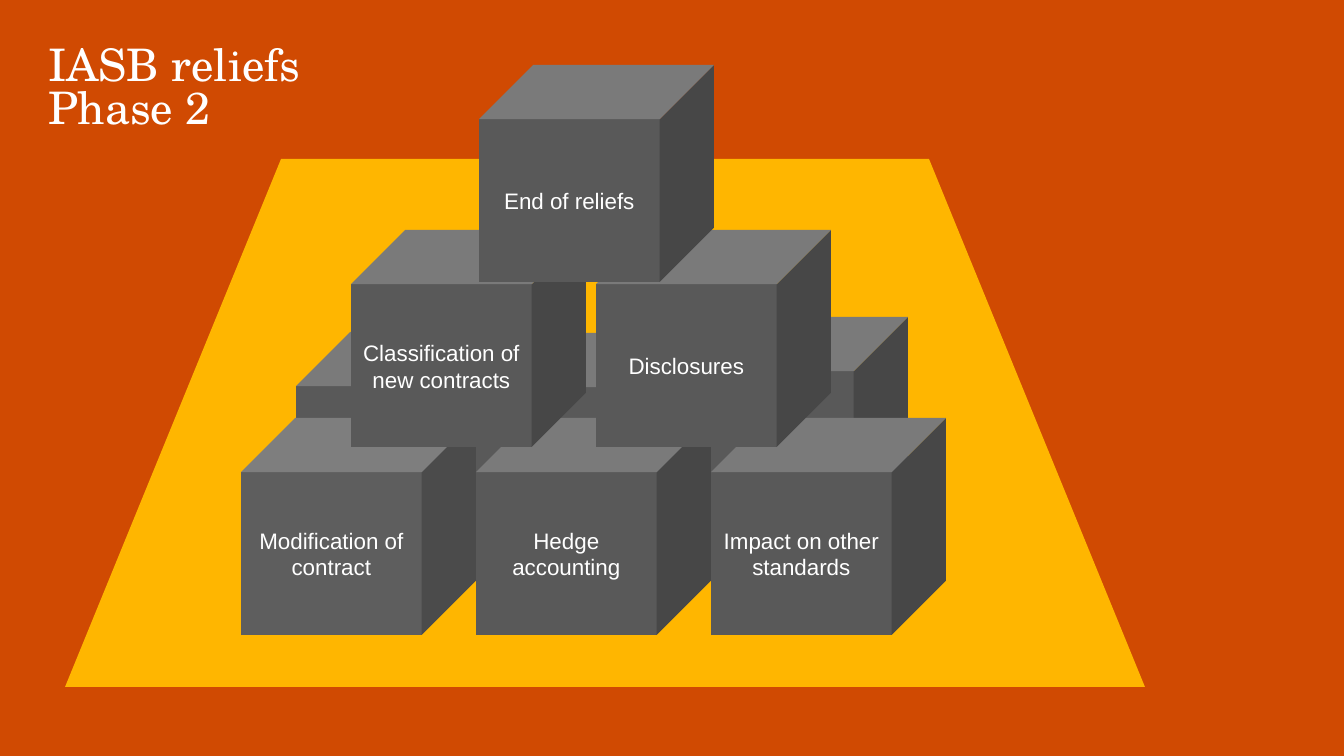
import pptx
import pptx.dml.color
import pptx.enum.shapes
import pptx.enum.text
import pptx.util

SLIDE_W, SLIDE_H = 1344, 756
EMU_PER_PX = 12192000 / SLIDE_W
CUBE_W, CUBE_H = 235, 217
COLORS = {
    "background": "D04A02",
    "floor": "FFB600",
    "cube": "595959",
    "light_cube": "5E5E5E",
    "text": "FFFFFF",
}
SHAPES = pptx.enum.shapes.MSO_SHAPE
ANCHORS = pptx.enum.text.MSO_ANCHOR
ALIGNS = pptx.enum.text.PP_ALIGN


def px(length):
    """Turn pixels into EMU."""
    return pptx.util.Emu(round(length * EMU_PER_PX))


def color(name):
    """Look up a named colour."""
    return pptx.dml.color.RGBColor.from_string(COLORS[name])


def write_text(frame, text, font="Arial", size=16, align=ALIGNS.CENTER,
               anchor=ANCHORS.MIDDLE, spacing=None, inset=None):
    """Write one formatted paragraph, with a line break at each newline."""
    frame.word_wrap = True
    frame.auto_size = pptx.enum.text.MSO_AUTO_SIZE.NONE
    frame.vertical_anchor = anchor
    if inset is not None:
        frame.margin_left = frame.margin_right = px(inset)
        frame.margin_top = frame.margin_bottom = px(inset)
    paragraph = frame.paragraphs[0]
    paragraph.alignment = align
    paragraph.line_spacing = spacing
    for index, line in enumerate(text.splitlines()):
        if index:
            paragraph.add_line_break()
        run = paragraph.add_run()
        run.text = line
        run.font.name = font
        run.font.size = pptx.util.Pt(size)
        run.font.color.rgb = color("text")


def add_block(slide, kind, left, top, width, height, fill):
    """Add a flat preset shape without outline or shadow."""
    block = slide.shapes.add_shape(kind, px(left), px(top), px(width), px(height))
    block.shadow.inherit = False
    block.fill.solid()
    block.fill.fore_color.rgb = color(fill)
    block.line.fill.background()
    return block


def add_cube(slide, left, top, label="", fill="cube"):
    """Add one cube of the pyramid with an optional label."""
    cube = add_block(slide, SHAPES.CUBE, left, top, CUBE_W, CUBE_H, fill)
    if label:
        write_text(cube.text_frame, label)


def add_title(slide, text):
    """Place and fill the title placeholder."""
    title = slide.shapes.title
    title.left, title.top, title.width, title.height = px(48), px(47), px(563), px(217)
    write_text(title.text_frame, text, font="TeX Gyre Schola", size=32,
               align=ALIGNS.LEFT, anchor=ANCHORS.TOP, spacing=0.8, inset=0)


def main():
    """Build the slide and save it."""
    deck = pptx.Presentation()
    deck.slide_width, deck.slide_height = px(SLIDE_W), px(SLIDE_H)
    slide = deck.slides.add_slide(deck.slide_layouts[5])
    slide.background.fill.solid()
    slide.background.fill.fore_color.rgb = color("background")

    floor = add_block(slide, SHAPES.FLOWCHART_MANUAL_OPERATION, 65, 159, 1080, 528, "floor")
    floor.rotation = 180
    add_title(slide, "IASB reliefs\nPhase 2")

    for left, top in ((296, 332), (456, 333), (673, 317)):
        add_cube(slide, left, top)

    front_row = ("Modification of contract", "Hedge accounting", "Impact on other standards")
    for column, label in enumerate(front_row):
        add_cube(slide, 241 + column * CUBE_W, 418, label,
                 "cube" if column else "light_cube")

    add_cube(slide, 351, 230, "Classification of new contracts")
    add_cube(slide, 596, 230, "Disclosures")
    add_cube(slide, 479, 65, "End of reliefs")
    deck.save("out.pptx")


if __name__ == "__main__":
    main()
